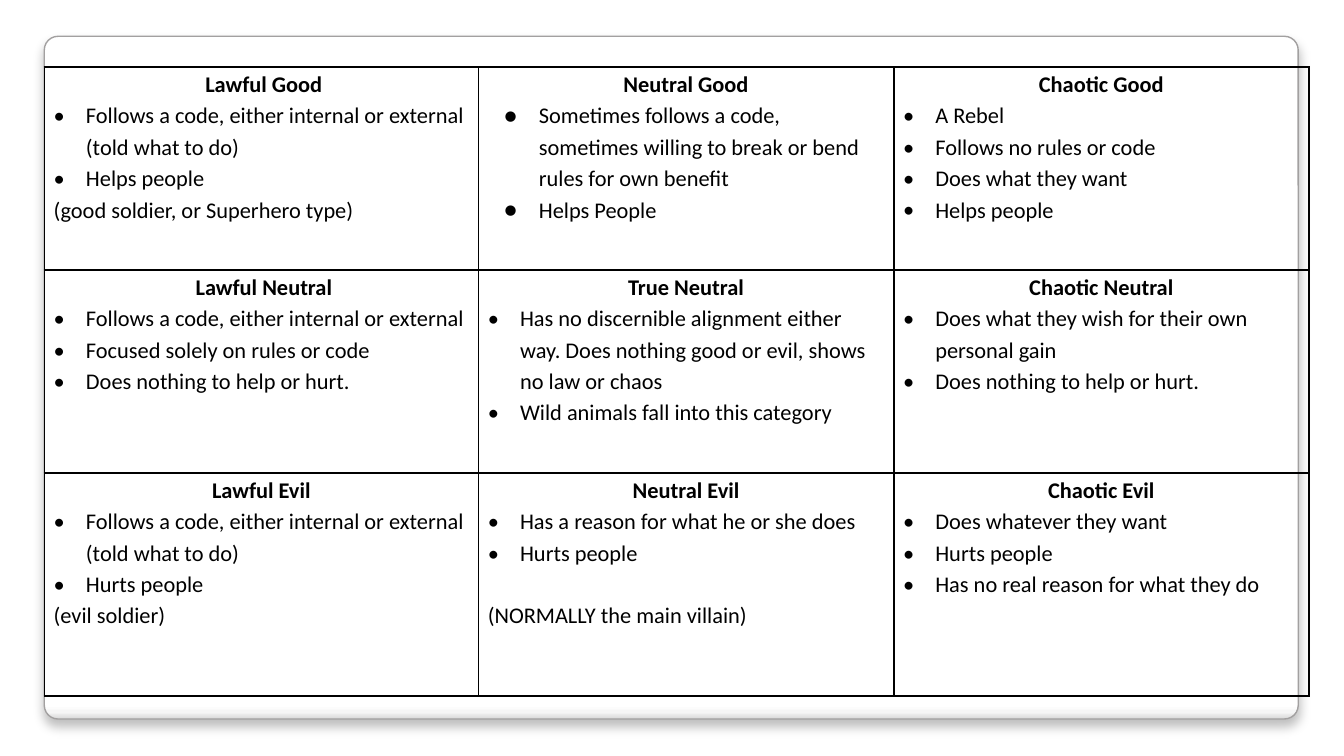
"""Build a slide with the nine character alignments in a three by three table."""
from dataclasses import dataclass
from typing import Optional

from lxml import etree
from pptx import Presentation
from pptx.dml.color import RGBColor
from pptx.enum import shapes, text
from pptx.oxml import ns
from pptx.util import Inches, Pt


@dataclass(frozen=True)
class Theme:
    font: str = "Calibri"
    size: float = 12
    line_spacing: float = 1.15
    ink: str = "000000"
    panel_line: str = "A2A0A0"
    panel_stops: tuple = ((0, "FFFFFF"), (98, "FFFFFF"), (99, "F6F6F6"), (100, "D8D8D8"))


@dataclass(frozen=True)
class Bullet:
    mark: str
    indent: float
    hang: float


DOT = Bullet("•", 0.24, 0.24)
DISC = Bullet("●", 0.38, 0.26)


@dataclass(frozen=True)
class Alignment:
    name: str
    traits: tuple
    example: Optional[str] = None
    example_gap: float = 0
    bullet: Bullet = DOT


THEME = Theme()
COLUMNS = (3.23, 3.09, 3.09)
ROWS = (1.51, 1.51, 1.66)
CODE = "Follows a code, either internal or external"
TOLD = f"{CODE} (told what to do)"
NO_EFFECT = "Does nothing to help or hurt."

ALIGNMENTS = (
    (
        Alignment(" Lawful Good", (TOLD, "Helps people"), "(good soldier, or Superhero type)"),
        Alignment("Neutral Good",
                  ("Sometimes follows a code, sometimes willing to break or bend rules for own benefit",
                   "Helps People"), bullet=DISC),
        Alignment("Chaotic Good",
                  ("A Rebel", "Follows no rules or code", "Does what they want", "Helps people")),
    ),
    (
        Alignment(" Lawful Neutral", (CODE, "Focused solely on rules or code", NO_EFFECT)),
        Alignment("True Neutral",
                  ("Has no discernible alignment either way. Does nothing good or evil, "
                   "shows no law or chaos", "Wild animals fall into this category")),
        Alignment("Chaotic Neutral",
                  ("Does what they wish for their own personal gain", NO_EFFECT)),
    ),
    (
        Alignment("Lawful Evil", (TOLD, "Hurts people"), "(evil soldier)"),
        Alignment("Neutral Evil", ("Has a reason for what he or she does", "Hurts people"),
                  "(NORMALLY the main villain)", example_gap=16.8),
        Alignment("Chaotic Evil",
                  ("Does whatever they want", "Hurts people", "Has no real reason for what they do")),
    ),
)


def add_node(parent, tag: str, **attributes):
    """Append a DrawingML element and return it."""
    return etree.SubElement(parent, ns.qn(f"a:{tag}"), attributes)


def add_color(parent, color: str):
    """Append an RGB colour element and return it."""
    return add_node(parent, "srgbClr", val=color)


def draw_panel(slide) -> None:
    """Draw the rounded panel with its shaded foot and soft shadow."""
    panel = slide.shapes.add_shape(shapes.MSO_SHAPE.ROUNDED_RECTANGLE,
                                   Inches(0.33), Inches(0.27), Inches(9.33), Inches(5.08))
    panel.adjustments[0] = 0.02
    panel.fill.gradient()
    panel.fill.gradient_angle = 270
    properties = panel.element.spPr
    stops = properties.find(f".//{ns.qn('a:gsLst')}")
    for stop in list(stops):
        stops.remove(stop)
    for position, color in THEME.panel_stops:
        add_color(add_node(stops, "gs", pos=str(position * 1000)), color)
    panel.line.color.rgb = RGBColor.from_string(THEME.panel_line)
    panel.line.width = Pt(0.75)
    panel.shadow.inherit = False
    shadow = add_node(properties.find(ns.qn("a:effectLst")), "outerShdw",
                      blurRad=str(Pt(6)), dist=str(Pt(4)), dir="5400000",
                      algn="t", rotWithShape="0")
    add_node(add_color(shadow, THEME.ink), "alpha", val="25000")


def format_paragraph(paragraph, bold: bool = False, bullet: Optional[Bullet] = None) -> None:
    """Apply the theme's type and an optional bullet to a paragraph."""
    paragraph.line_spacing = THEME.line_spacing
    if bullet:
        properties = paragraph._p.get_or_add_pPr()
        properties.set("marL", str(Inches(bullet.indent)))
        properties.set("indent", str(-Inches(bullet.hang)))
        add_color(add_node(properties, "buClr"), THEME.ink)
        add_node(properties, "buFont", typeface=THEME.font)
        add_node(properties, "buChar", char=bullet.mark)
    for run in paragraph.runs:
        run.font.name = THEME.font
        run.font.size = Pt(THEME.size)
        run.font.bold = bold
        run.font.color.rgb = RGBColor.from_string(THEME.ink)


def frame_cell(cell) -> None:
    """Set a cell's margins, borders and clear fill."""
    cell.margin_left = cell.margin_right = Inches(0.07)
    cell.margin_top = cell.margin_bottom = 0
    properties = cell._tc.get_or_add_tcPr()
    for side in "LRTB":
        border = add_node(properties, f"ln{side}", w=str(Pt(1)))
        add_color(add_node(border, "solidFill"), THEME.ink)
    cell.fill.background()


def fill_cell(cell, alignment: Alignment) -> None:
    """Write an alignment's name, traits and example into a cell."""
    frame_cell(cell)
    lines = [alignment.name, *alignment.traits]
    if alignment.example:
        lines.append(alignment.example)
    cell.text_frame.text = "\n".join(lines)
    name, *details = cell.text_frame.paragraphs
    name.alignment = text.PP_ALIGN.CENTER
    format_paragraph(name, bold=True)
    count = len(alignment.traits)
    for trait in details[:count]:
        format_paragraph(trait, bullet=alignment.bullet)
    for example in details[count:]:
        format_paragraph(example)
        if alignment.example_gap:
            example.space_before = Pt(alignment.example_gap)


def draw_alignments(slide) -> None:
    """Draw the table of alignments."""
    grid = slide.shapes.add_table(len(ROWS), len(COLUMNS), Inches(0.33), Inches(0.5),
                                  Inches(sum(COLUMNS)), Inches(sum(ROWS))).table
    grid.first_row = grid.horz_banding = False
    for column, width in zip(grid.columns, COLUMNS):
        column.width = Inches(width)
    for row, height, alignments in zip(grid.rows, ROWS, ALIGNMENTS):
        row.height = Inches(height)
        for cell, alignment in zip(row.cells, alignments):
            fill_cell(cell, alignment)


def main() -> None:
    """Build and save the presentation."""
    deck = Presentation()
    deck.slide_width = Inches(10)
    deck.slide_height = deck.slide_width * 9 // 16
    slide = deck.slides.add_slide(deck.slide_layouts[6])
    draw_panel(slide)
    draw_alignments(slide)
    deck.save("out.pptx")


if __name__ == "__main__":
    main()
